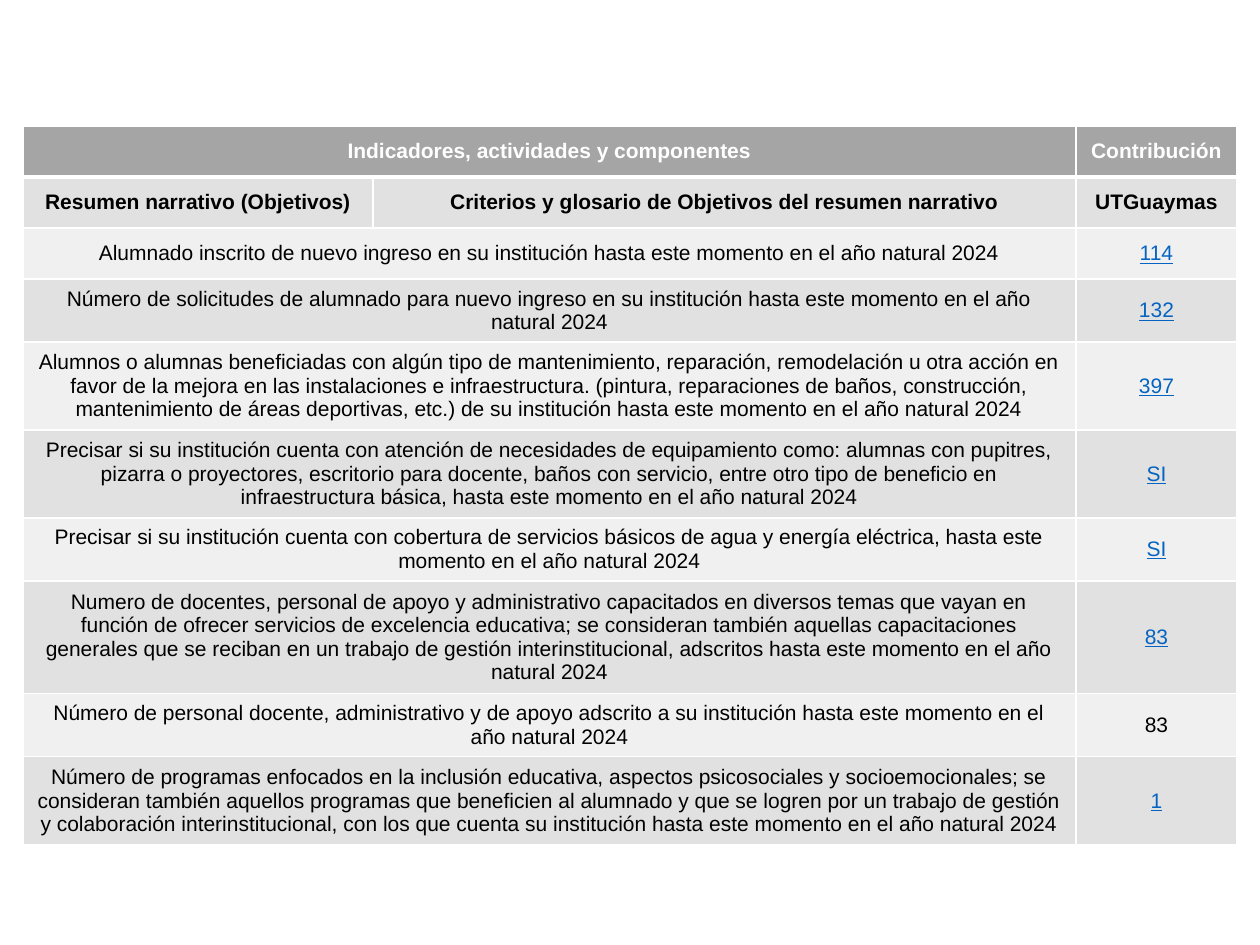
from dataclasses import dataclass

from lxml import etree
from pptx import Presentation
from pptx import util as u
from pptx.dml.color import RGBColor
from pptx.enum import text
from pptx.oxml import ns

PX = u.Inches(1) // 126


@dataclass(frozen=True)
class Theme:
    font: str = "Arial"
    size: int = 12
    header: str = "A5A5A5"
    dark_band: str = "E1E1E1"
    light_band: str = "F0F0F0"
    border: str = "FFFFFF"
    header_text: str = "FFFFFF"
    body_text: str = "000000"
    link: str = "0563C1"


THEME = Theme()
LEFT, TOP = 23, 126
COLUMNS = (350, 703, 161)
HEADING_HEIGHT = 51

HEADER = ("Indicadores, actividades y componentes", "Contribución")
SUBHEADER = (
    "Resumen narrativo (Objetivos)",
    "Criterios y glosario de Objetivos del resumen narrativo",
    "UTGuaymas",
)
# Row height, indicator, contribution, contribution looks like a link
INDICATORS = (
    (51, "Alumnado inscrito de nuevo ingreso en su institución hasta este momento "
     "en el año natural 2024", "114", True),
    (63, "Número de solicitudes de alumnado para nuevo ingreso en su institución hasta "
     "este momento en el año natural 2024", "132", True),
    (88, "Alumnos o alumnas beneficiadas con algún tipo de mantenimiento, reparación, "
     "remodelación u otra acción en favor de la mejora en las instalaciones e "
     "infraestructura. (pintura, reparaciones de baños, construcción, mantenimiento de "
     "áreas deportivas, etc.) de su institución hasta este momento en el año natural 2024",
     "397", True),
    (88, "Precisar si su institución cuenta con atención de necesidades de equipamiento "
     "como: alumnas con pupitres, pizarra o proyectores, escritorio para docente, baños "
     "con servicio, entre otro tipo de beneficio en infraestructura básica, hasta este "
     "momento en el año natural 2024", "SI", True),
    (63, "Precisar si su institución cuenta con cobertura de servicios básicos de agua y "
     "energía eléctrica, hasta este momento en el año natural 2024", "SI", True),
    (113, "Numero de docentes, personal de apoyo y administrativo capacitados en diversos "
     "temas que vayan en función de ofrecer servicios de excelencia educativa; se "
     "consideran también aquellas capacitaciones generales que se reciban en un trabajo "
     "de gestión interinstitucional, adscritos hasta este momento en el año natural 2024",
     "83", True),
    (63, "Número de personal docente, administrativo y de apoyo adscrito a su institución "
     "hasta este momento en el año natural 2024", "83", False),
    (88, "Número de programas enfocados en la inclusión educativa, aspectos psicosociales "
     "y socioemocionales; se consideran también aquellos programas que beneficien al "
     "alumnado y que se logren por un trabajo de gestión y colaboración "
     "interinstitucional, con los que cuenta su institución hasta este momento en el año "
     "natural 2024", "1", True),
)


def px(n):
    return u.Emu(n * PX)


def set_borders(cell, top, bottom):
    """Draw all four edges; top and bottom are widths in points."""
    tc_pr = cell._tc.get_or_add_tcPr()
    for side, width in (("L", 1), ("R", 1), ("T", top), ("B", bottom)):
        ln = etree.SubElement(tc_pr, ns.qn(f"a:ln{side}"), w=str(u.Pt(width)))
        fill = etree.SubElement(ln, ns.qn("a:solidFill"))
        etree.SubElement(fill, ns.qn("a:srgbClr"), val=THEME.border)


def style_row(table, row, fill):
    """Fill and border a row, with a thick rule under the header."""
    for cell in table.rows[row].cells:
        set_borders(cell, top=3 if row == 1 else 1, bottom=3 if row == 0 else 1)
        cell.fill.solid()
        cell.fill.fore_color.rgb = RGBColor.from_string(fill)


def write_cell(cell, content, color=THEME.body_text, bold=False, underline=False):
    cell.vertical_anchor = text.MSO_ANCHOR.MIDDLE
    p = cell.text_frame.paragraphs[0]
    p.text = content
    p.alignment = text.PP_ALIGN.CENTER
    font = p.font
    font.name, font.size = THEME.font, u.Pt(THEME.size)
    font.bold, font.underline = bold, underline
    font.color.rgb = RGBColor.from_string(color)
    # Run-level values outrank the header style of the table
    run_font = p.runs[0].font
    run_font.bold = bold
    run_font.underline = underline
    run_font.color.rgb = RGBColor.from_string(color)


def merge_indicator(table, row):
    table.cell(row, 0).merge(table.cell(row, 1))


def add_indicator_table(s):
    heights = [HEADING_HEIGHT] * 2 + [item[0] for item in INDICATORS]
    frame = s.shapes.add_table(len(heights), len(COLUMNS), px(LEFT), px(TOP),
                               px(sum(COLUMNS)), px(sum(heights)))
    table = frame.table
    for column, width in zip(table.columns, COLUMNS):
        column.width = px(width)
    for row, height in zip(table.rows, heights):
        row.height = px(height)
    return table


def fill_headings(table):
    style_row(table, 0, THEME.header)
    merge_indicator(table, 0)
    for col, content in zip((0, 2), HEADER):
        write_cell(table.cell(0, col), content, THEME.header_text, bold=True)
    style_row(table, 1, THEME.dark_band)
    for col, content in enumerate(SUBHEADER):
        write_cell(table.cell(1, col), content, bold=True)


def fill_indicators(table):
    for row, (_, indicator, contribution, linked) in enumerate(INDICATORS, start=2):
        style_row(table, row, THEME.dark_band if row % 2 else THEME.light_band)
        merge_indicator(table, row)
        write_cell(table.cell(row, 0), indicator)
        color = THEME.link if linked else THEME.body_text
        write_cell(table.cell(row, 2), contribution, color, underline=linked)


def main():
    prs = Presentation()
    prs.slide_width, prs.slide_height = u.Inches(10), u.Inches(7.5)
    s = prs.slides.add_slide(prs.slide_layouts[6])
    table = add_indicator_table(s)
    fill_headings(table)
    fill_indicators(table)
    prs.save("out.pptx")


if __name__ == "__main__":
    main()
